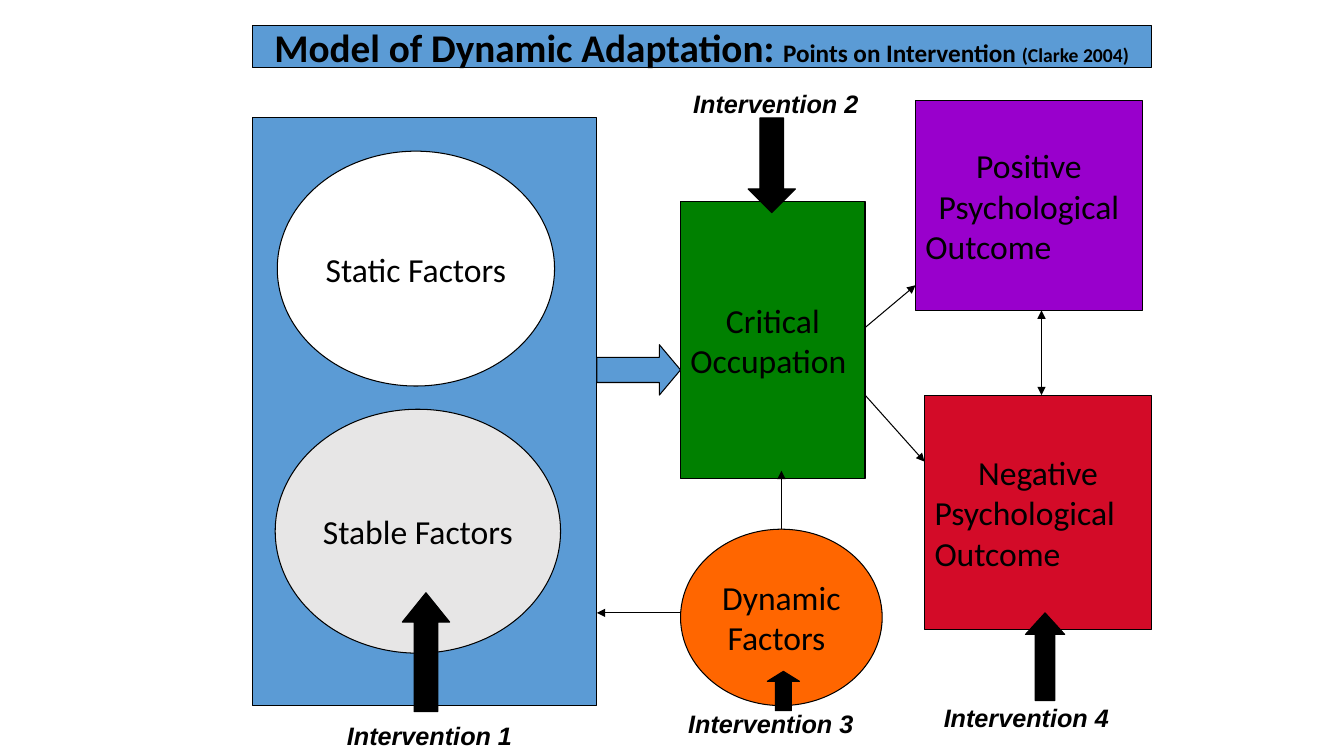
from dataclasses import dataclass

from lxml import etree
from pptx import Presentation
from pptx.dml.color import RGBColor
from pptx.enum.shapes import MSO_CONNECTOR, MSO_SHAPE
from pptx.enum.text import MSO_ANCHOR, MSO_AUTO_SIZE, PP_ALIGN
from pptx.oxml.ns import qn
from pptx.util import Inches, Pt

RECT, OVAL = MSO_SHAPE.RECTANGLE, MSO_SHAPE.OVAL
RIGHT, UP, DOWN = MSO_SHAPE.RIGHT_ARROW, MSO_SHAPE.UP_ARROW, MSO_SHAPE.DOWN_ARROW
STRAIGHT = MSO_CONNECTOR.STRAIGHT
CENTER, LEFT = PP_ALIGN.CENTER, PP_ALIGN.LEFT
MIDDLE, NO_FIT = MSO_ANCHOR.MIDDLE, MSO_AUTO_SIZE.NONE

COLORS = {
    "black": "000000", "white": "FFFFFF", "blue": "5B9BD5", "gray": "E7E6E6",
    "green": "008000", "orange": "FF6600", "purple": "9900CC", "red": "D30B28",
}


@dataclass
class Node:
    kind: int
    at: tuple[float, float, float, float]
    color: str
    lines: tuple[str, ...] = ()
    centered: int = 1  # number of leading lines that are centred


@dataclass
class BlockArrow:
    kind: int
    at: tuple[float, float, float, float]
    head: float
    color: str = "black"


@dataclass
class Link:
    start: tuple[float, float]
    end: tuple[float, float]
    both_ends: bool = False


@dataclass
class Label:
    text: str
    at: tuple[float, float, float]


NODES = [
    Node(RECT, (2.5, 1.17, 3.42, 5.83), "blue"),
    Node(OVAL, (2.75, 1.5, 2.75, 2.33), "white", ("Static Factors",)),
    Node(OVAL, (2.73, 4.06, 2.83, 2.42), "gray", ("Stable Factors",)),
    Node(RECT, (6.75, 2, 1.83, 2.75), "green", ("Critical", "Occupation")),
    Node(OVAL, (6.75, 5.25, 2, 1.75), "orange", ("Dynamic", " Factors")),
    Node(RECT, (9.08, 1, 2.25, 2.08), "purple",
         ("Positive", "Psychological", "Outcome"), 2),
    Node(RECT, (9.17, 3.92, 2.25, 2.33), "red",
         ("Negative", "Psychological", "Outcome")),
]
LINKS = [
    Link((7.75, 5.25), (7.75, 4.67)),
    Link((8.58, 3.25), (9.08, 2.83)),
    Link((10.33, 3.08), (10.33, 3.92), both_ends=True),
    Link((6.75, 6.08), (5.92, 6.08)),
    Link((8.58, 3.92), (9.17, 4.58)),
]
LABELS = [
    Label("Intervention 1", (3.04, 7.1, 2.44)),
    Label("Intervention 2", (6.5, 0.83, 2.39)),
    Label("Intervention 3", (6.19, 6.98, 2.91)),
    Label("Intervention 4", (9.08, 6.92, 2.2)),
]
BLOCK_ARROWS = [
    BlockArrow(RIGHT, (5.92, 3.42, 0.83, 0.5), 0.42, "blue"),
    BlockArrow(UP, (3.99, 5.88, 0.47, 1.18), 0.62),
    BlockArrow(DOWN, (7.42, 1.17, 0.47, 0.94), 0.5),
    BlockArrow(UP, (7.61, 6.66, 0.32, 0.39), 0.31),
    BlockArrow(UP, (10.17, 6.08, 0.39, 0.87), 0.55),
]
TITLE_RUNS = [
    ("Model of Dynamic Adaptation: ", 28),
    ("Points on Intervention ", 18),
    ("(Clarke 2004)", 14),
]


def rgb(name: str) -> RGBColor:
    return RGBColor.from_string(COLORS[name])


def paint(shape, color: str) -> None:
    shape.fill.solid()
    shape.fill.fore_color.rgb = rgb(color)
    shape.line.color.rgb = rgb("black")
    shape.line.width = Pt(0.75)


def add_text(p, text: str, *, size: float = 24, font: str = "Calibri",
             bold: bool = False, italic: bool = False, align=CENTER) -> None:
    p.alignment = align
    r = p.add_run()
    r.text = text
    r.font.size, r.font.name = Pt(size), font
    r.font.bold, r.font.italic = bold, italic
    r.font.color.rgb = rgb("black")


def add_filled(s, kind: int, at: tuple, color: str):
    sp = s.shapes.add_shape(kind, *map(Inches, at))
    sp.shadow.inherit = False
    paint(sp, color)
    return sp


def add_node(s, node: Node) -> None:
    tf = add_filled(s, node.kind, node.at, node.color).text_frame
    tf.word_wrap, tf.vertical_anchor = False, MIDDLE
    for i, line in enumerate(node.lines):
        p = tf.add_paragraph() if i else tf.paragraphs[0]
        add_text(p, line, align=CENTER if i < node.centered else LEFT)


def add_block_arrow(s, arrow: BlockArrow) -> None:
    sp = add_filled(s, arrow.kind, arrow.at, arrow.color)
    sp.adjustments[0], sp.adjustments[1] = 0.5, arrow.head


def add_link(s, link: Link) -> None:
    cn = s.shapes.add_connector(STRAIGHT, *map(Inches, link.start + link.end))
    cn.line.color.rgb = rgb("black")
    cn.line.width = Pt(0.75)
    ln = cn.line._get_or_add_ln()
    for tag in ("a:headEnd", "a:tailEnd") if link.both_ends else ("a:tailEnd",):
        etree.SubElement(ln, qn(tag), type="triangle")
    etree.SubElement(cn._element.spPr, qn("a:effectLst"))


def add_label(s, label: Label) -> None:
    tf = s.shapes.add_textbox(*map(Inches, (*label.at, 0.4))).text_frame
    tf.word_wrap = True
    add_text(tf.paragraphs[0], label.text, size=18, font="Arial",
             bold=True, italic=True)


def add_title(s) -> None:
    title = s.shapes.title
    title.left, title.top, title.width, title.height = map(
        Inches, (2.5, 0.25, 8.92, 0.42))
    paint(title, "blue")
    tf = title.text_frame
    tf.word_wrap, tf.vertical_anchor, tf.auto_size = False, MIDDLE, NO_FIT
    for text, size in TITLE_RUNS:
        add_text(tf.paragraphs[0], text, size=size, bold=True)


def main() -> None:
    prs = Presentation()
    prs.slide_width, prs.slide_height = Inches(13.33), Inches(7.5)
    s = prs.slides.add_slide(prs.slide_layouts[5])
    add_title(s)
    for draw, items in ((add_node, NODES), (add_link, LINKS),
                        (add_label, LABELS), (add_block_arrow, BLOCK_ARROWS)):
        for item in items:
            draw(s, item)
    prs.save("out.pptx")


if __name__ == "__main__":
    main()
